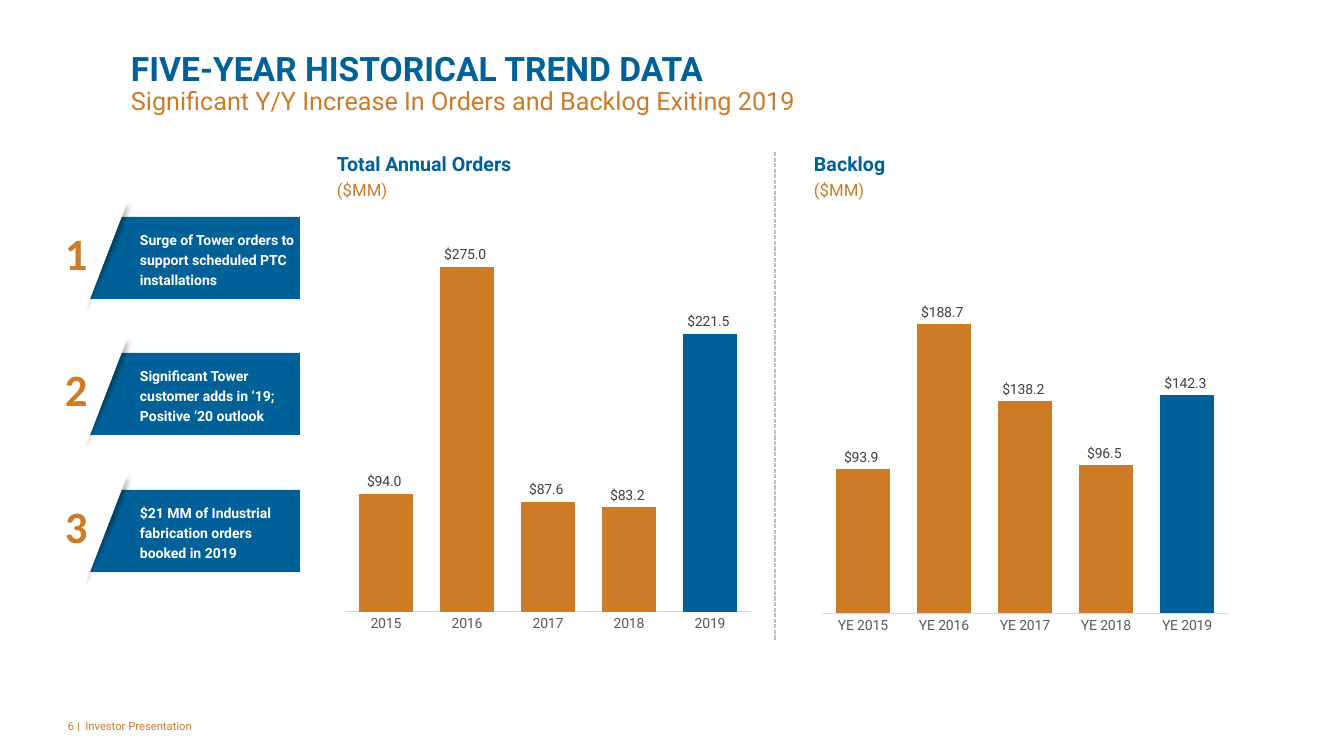
from lxml import etree
from pptx import Presentation
from pptx.chart.data import CategoryChartData
from pptx.dml.color import RGBColor
from pptx.enum.chart import XL_CHART_TYPE as ChartType, XL_LABEL_POSITION as LabelPos, XL_TICK_MARK as TickMark
from pptx.enum.dml import MSO_LINE
from pptx.enum.shapes import MSO_CONNECTOR as Connector, MSO_SHAPE as Shape
from pptx.enum.text import MSO_ANCHOR as Anchor, MSO_AUTO_SIZE as AutoSize, PP_ALIGN as Align
from pptx.oxml.ns import qn
from pptx.util import Pt

TITLE = "FIVE-YEAR HISTORICAL TREND DATA"
SUBTITLE = "Significant Y/Y Increase In Orders and Backlog Exiting 2019"
FOOTER = "6 |  Investor Presentation"
CALLOUTS = [
    "Surge of Tower orders to support scheduled PTC installations",
    "Significant Tower customer adds in ’19; Positive ’20 outlook",
    "$21 MM of Industrial fabrication orders booked in 2019",
]
UNIT = "($MM)"
YEARS = ["2015", "2016", "2017", "2018", "2019"]
PANELS = [
    {"heading": "Total Annual Orders", "left": 337, "chart_top": 227, "axis_max": 300,
     "categories": YEARS, "values": [94.0, 275.0, 87.6, 83.2, 221.5]},
    {"heading": "Backlog", "left": 814, "chart_top": 300, "axis_max": 200,
     "categories": [f"YE {year}" for year in YEARS],
     "values": [93.9, 188.7, 138.2, 96.5, 142.3]},
]
COLORS = {"blue": "006198", "orange": "CE7B28", "white": "FFFFFF", "divider": "BFBFBF",
          "axis": "D9D9D9", "category": "595959", "label": "404040", "shadow": "000000"}
DOLLARS = '"$"#,##0.0_);\\("$"#,##0.0\\)'
FONT = "Roboto"
EMU_PER_PX = 914400 / 100.8
PANEL_TOP, PANEL_BOTTOM, PANEL_WIDTH = 152, 640, 422
CALLOUT_TOP, CALLOUT_SPAN = 217, 273  # the span covers two rows


def px(*lengths):
    return [round(length * EMU_PER_PX) for length in lengths]


def color(name):
    return RGBColor.from_string(COLORS[name])


def style(font, size, color_name, bold=False, name=FONT):
    font.name, font.size, font.bold = name, Pt(size), bold
    font.color.rgb = color(color_name)


def set_frame(frame, anchor, margins=(0, 0, 0, 0), wrap=True):
    frame.auto_size, frame.word_wrap, frame.vertical_anchor = AutoSize.NONE, wrap, anchor
    (frame.margin_left, frame.margin_top,
     frame.margin_right, frame.margin_bottom) = px(*margins)


def add_block(slide, preset, box, fill):
    block = slide.shapes.add_shape(preset, *px(*box))
    block.shadow.inherit = False
    block.fill.solid()
    block.fill.fore_color.rgb = color(fill)
    block.line.fill.background()
    return block


def cast_shadow(shape):
    """Give the shape a soft shadow to its right."""
    effects = shape._element.spPr.find(qn("a:effectLst"))
    shadow = etree.SubElement(effects, qn("a:outerShdw"), blurRad=str(Pt(4)),
                              dist=str(Pt(3)), dir="0", algn="l", rotWithShape="0")
    tint = etree.SubElement(shadow, qn("a:srgbClr"), val=COLORS["shadow"])
    etree.SubElement(tint, qn("a:alpha"), val="40000")


def add_title(slide):
    title = slide.shapes.title
    title.left, title.top, title.width, title.height = px(131, 52, 1090, 64)
    set_frame(title.text_frame, Anchor.BOTTOM)
    line = title.text_frame.paragraphs[0]
    line.alignment, line.line_spacing = Align.LEFT, 0.9
    heading = line.add_run()
    heading.text = TITLE
    style(heading.font, 24, "blue", True)
    line.add_line_break()
    subtitle = line.add_run()
    subtitle.text = SUBTITLE
    style(subtitle.font, 18, "orange")


def add_text(slide, text, box, size, font_name=FONT, **look):
    frame = slide.shapes.add_textbox(*px(*box)).text_frame
    bold = look.pop("bold", False)
    set_frame(frame, Anchor.MIDDLE, **look)
    frame.text = text
    style(frame.paragraphs[0].font, size, "orange", bold, font_name)


def add_callout(slide, index, text):
    top = CALLOUT_TOP + CALLOUT_SPAN * index // 2
    body = add_block(slide, Shape.RECTANGLE, (90, top, 210, 82), "blue")
    set_frame(body.text_frame, Anchor.MIDDLE, (50, 5, 5, 5))
    body.text_frame.text = text
    line = body.text_frame.paragraphs[0]
    line.alignment, line.line_spacing = Align.LEFT, 1.2
    style(line.font, 10, "white", True)

    edge = add_block(slide, Shape.OVAL, (97, top - 16, 7, 115), "white")
    edge.rotation = 23.2
    cast_shadow(edge)
    cover = add_block(slide, Shape.PARALLELOGRAM, (30, top - 14, 97, 111), "white")
    cover.adjustments[0] = 0.44
    add_text(slide, str(index + 1), (65, top + 9, 23, 53), 32, "Calibri",
             bold=True, wrap=False)


def add_heading(slide, panel):
    box = add_block(slide, Shape.RECTANGLE, (panel["left"], PANEL_TOP, PANEL_WIDTH, 48), "white")
    frame = box.text_frame
    set_frame(frame, Anchor.TOP)
    frame.text = f"{panel['heading']}\n{UNIT}"
    for line, look in zip(frame.paragraphs, [(14, "blue", True), (12, "orange")]):
        line.alignment, line.space_after = Align.LEFT, Pt(3.3)
        style(line.font, *look)


def add_bars(slide, panel):
    data = CategoryChartData(number_format=DOLLARS)
    data.categories = panel["categories"]
    data.add_series(panel["heading"], panel["values"])
    top = panel["chart_top"]
    chart = slide.shapes.add_chart(
        ChartType.COLUMN_CLUSTERED,
        *px(panel["left"], top, PANEL_WIDTH, PANEL_BOTTOM - top), data).chart
    chart.has_legend = chart.has_title = False
    style(chart.font, 10, "label")

    amounts = chart.value_axis
    amounts.minimum_scale, amounts.maximum_scale = 0, panel["axis_max"]
    amounts.has_major_gridlines = amounts.visible = False
    years = chart.category_axis
    years.major_tick_mark = years.minor_tick_mark = TickMark.NONE
    years.format.line.color.rgb = color("axis")
    years.format.line.width = Pt(0.75)
    style(years.tick_labels.font, 10, "category")

    plot = chart.plots[0]
    plot.gap_width, plot.overlap, plot.vary_by_categories = 50, -27, False
    bars = plot.series[0]
    latest = bars.points[len(panel["values"]) - 1]
    for part, name in [(bars, "orange"), (latest, "blue")]:
        part.format.fill.solid()
        part.format.fill.fore_color.rgb = color(name)
    labels = bars.data_labels
    labels.show_value, labels.position = True, LabelPos.OUTSIDE_END
    labels.number_format, labels.number_format_is_linked = DOLLARS, False
    style(labels.font, 10, "label")


def add_divider(slide):
    divider = slide.shapes.add_connector(
        Connector.STRAIGHT, *px(775, PANEL_TOP, 775, PANEL_BOTTOM))
    divider.line.color.rgb = color("divider")
    divider.line.width, divider.line.dash_style = Pt(1), MSO_LINE.SQUARE_DOT
    etree.SubElement(divider._element.spPr, qn("a:effectLst"))


def main():
    deck = Presentation()
    deck.slide_width, deck.slide_height = px(1344, 756)
    slide = deck.slides.add_slide(deck.slide_layouts[5])
    add_title(slide)
    add_text(slide, FOOTER, (58, 706, 302, 40), 8, margins=(10, 5, 10, 5))
    for panel in PANELS:
        add_heading(slide, panel)
        add_bars(slide, panel)
    add_divider(slide)
    for index, text in enumerate(CALLOUTS):
        add_callout(slide, index, text)
    deck.save("out.pptx")


if __name__ == "__main__":
    main()
